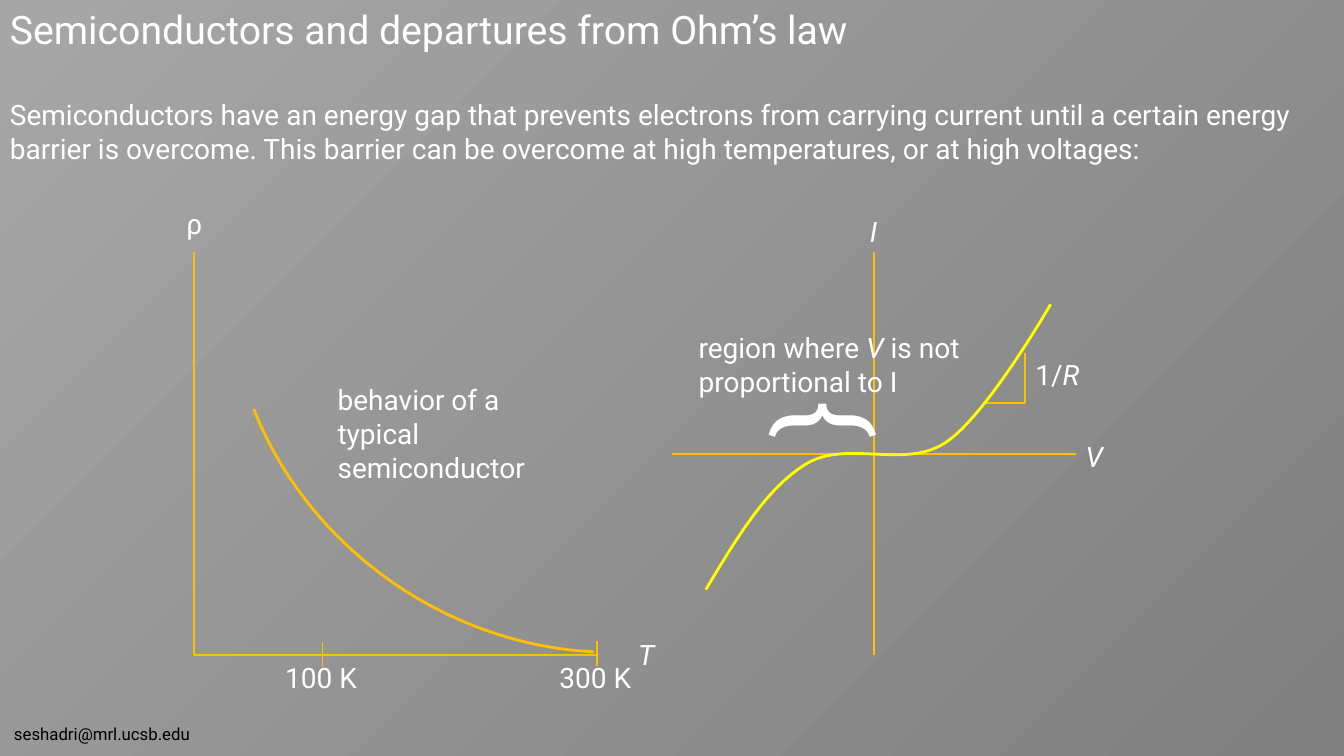
from lxml.etree import SubElement
from pptx import Presentation
from pptx.dml.color import RGBColor
from pptx.enum.shapes import MSO_CONNECTOR, MSO_SHAPE
from pptx.enum.text import MSO_AUTO_SIZE
from pptx.oxml.ns import qn
from pptx.util import Inches, Pt

FONT = "Roboto"
WHITE, BLACK, AMBER, YELLOW = "FFFFFF", "000000", "FFC000", "FFFF00"
BACKGROUND_STOPS = [(0.01, "A6A6A6"), (0.99, "808080")]

# Text: (left, top, width, height), runs as (wording, italic), size, colour, wrap, rotation
TEXTS = [
    ((0.04, 7.13, 1.95, 0.3), [("seshadri@mrl.ucsb.edu", False)], 12, BLACK, False, 0),
    ((0, 0, 13.33, 0.57), [("Semiconductors and departures from Ohm’s law", False)],
     28, WHITE, True, 0),
    ((0, 0.92, 13.33, 0.77),
     [("Semiconductors have an energy gap that prevents electrons from carrying current "
       "until a certain energy barrier is overcome. This barrier can be overcome at high "
       "temperatures, or at high voltages:", False)], 20, WHITE, True, 0),
    ((5.45, 6.5, 0.94, 0.44), [("300 K", False)], 20, WHITE, False, 0),
    ((2.73, 6.5, 0.94, 0.44), [("100 K", False)], 20, WHITE, False, 0),
    ((6.23, 6.28, 0.36, 0.44), [("T", True)], 20, WHITE, False, 0),
    ((1.75, 2, 0.36, 0.44), [("ρ", False)], 20, WHITE, False, 0),
    ((3.25, 3.75, 2.33, 1.11), [("behavior of a typical semiconductor", False)],
     20, WHITE, True, 0),
    ((10.67, 4.31, 0.39, 0.44), [("V", True)], 20, WHITE, False, 0),
    ((8.53, 2.08, 0.28, 0.44), [("I", True)], 20, WHITE, False, 0),
    ((10.17, 3.5, 0.64, 0.44), [("1/", False), ("R", True)], 20, WHITE, False, 0),
    ((6.83, 3.23, 3.25, 0.77),
     [("region where ", False), ("V", True), (" is not proportional to I", False)],
     20, WHITE, True, 0),
    ((7.92, 3.58, 0.28, 1.45), [("}", False)], 80, WHITE, True, 270),
]

# Lines: start, end, width in points
LINES = [
    ((1.92, 2.5), (1.92, 6.5), 1.5),     # resistivity axis
    ((1.92, 6.5), (5.92, 6.5), 1.5),     # temperature axis
    ((3.2, 6.37), (3.2, 6.62), 1),       # 100 K tick
    ((5.92, 6.36), (5.92, 6.61), 1),     # 300 K tick
    ((8.67, 2.5), (8.67, 6.5), 1.5),     # current axis
    ((6.67, 4.5), (10.67, 4.5), 1.5),    # voltage axis
    ((9.75, 4), (10.17, 4), 1.5),        # slope run
    ((10.17, 4), (10.17, 3.5), 1.5),     # slope rise
]

# Resistivity arc: box, rotation, start and end adjustments
ARC_BOX, ARC_ROTATION, ARC_ENDS = (2.17, 0.02, 7.08, 6.33), 213.8, (139.82, 186.53)

# Current-voltage curve: start, then cubic segments (control, control, end)
CURVE_START = (7, 5.85)
CURVE_SEGMENTS = [
    ((7.3, 5.35), (7.6, 4.84), (8, 4.6)),
    ((8.4, 4.36), (8.98, 4.66), (9.38, 4.39)),
    ((9.78, 4.13), (10.42, 3.02), (10.42, 3.02)),
]
STEPS = 24


def color(hex_string):
    return RGBColor.from_string(hex_string)


def style_line(shape, hex_string, width):
    shape.line.color.rgb = color(hex_string)
    shape.line.width = Pt(width)


def add_text(slide, box, runs, size, hex_string, wrap, rotation):
    shape = slide.shapes.add_textbox(*map(Inches, box))
    shape.rotation = rotation
    frame = shape.text_frame
    frame.word_wrap = wrap
    frame.auto_size = MSO_AUTO_SIZE.SHAPE_TO_FIT_TEXT
    paragraph = frame.paragraphs[0]
    for wording, italic in runs:
        run = paragraph.add_run()
        run.text = wording
        if italic:
            run.font.italic = True
    paragraph.font.name = FONT
    paragraph.font.size = Pt(size)
    paragraph.font.color.rgb = color(hex_string)


def add_line(slide, start, end, width):
    line = slide.shapes.add_connector(
        MSO_CONNECTOR.STRAIGHT, *map(Inches, start + end))
    style_line(line, AMBER, width)
    SubElement(line._element.spPr, qn("a:effectLst"))


def cubic_point(points, t):
    weights = ((1 - t) ** 3, 3 * t * (1 - t) ** 2, 3 * t ** 2 * (1 - t), t ** 3)
    return tuple(Inches(sum(w * point[axis] for w, point in zip(weights, points)))
                 for axis in (0, 1))


def add_curve(slide):
    vertices, start = [], CURVE_START
    for segment in CURVE_SEGMENTS:
        points = (start,) + segment
        vertices += [cubic_point(points, step / STEPS) for step in range(1, STEPS + 1)]
        start = segment[-1]
    builder = slide.shapes.build_freeform(*map(Inches, CURVE_START))
    builder.add_line_segments(vertices, close=False)
    curve = builder.convert_to_shape()
    curve.shadow.inherit = False
    curve.fill.background()
    style_line(curve, YELLOW, 2)


def add_arc(slide):
    arc = slide.shapes.add_shape(MSO_SHAPE.ARC, *map(Inches, ARC_BOX))
    arc.rotation = ARC_ROTATION
    for index, value in enumerate(ARC_ENDS):
        arc.adjustments[index] = value
    arc.shadow.inherit = False
    arc.fill.background()
    style_line(arc, AMBER, 2)


def main():
    presentation = Presentation()
    presentation.slide_width, presentation.slide_height = Inches(13.33), Inches(7.5)
    slide = presentation.slides.add_slide(presentation.slide_layouts[6])

    # Background gradient, light at top left
    fill = slide.background.fill
    fill.gradient()
    fill.gradient_angle = 315
    for stop, (position, hex_string) in zip(fill.gradient_stops, BACKGROUND_STOPS):
        stop.position = position
        stop.color.rgb = color(hex_string)

    # Graphs, then wording on top
    add_arc(slide)
    for line in LINES:
        add_line(slide, *line)
    add_curve(slide)
    for text in TEXTS:
        add_text(slide, *text)

    presentation.save("out.pptx")


if __name__ == "__main__":
    main()
